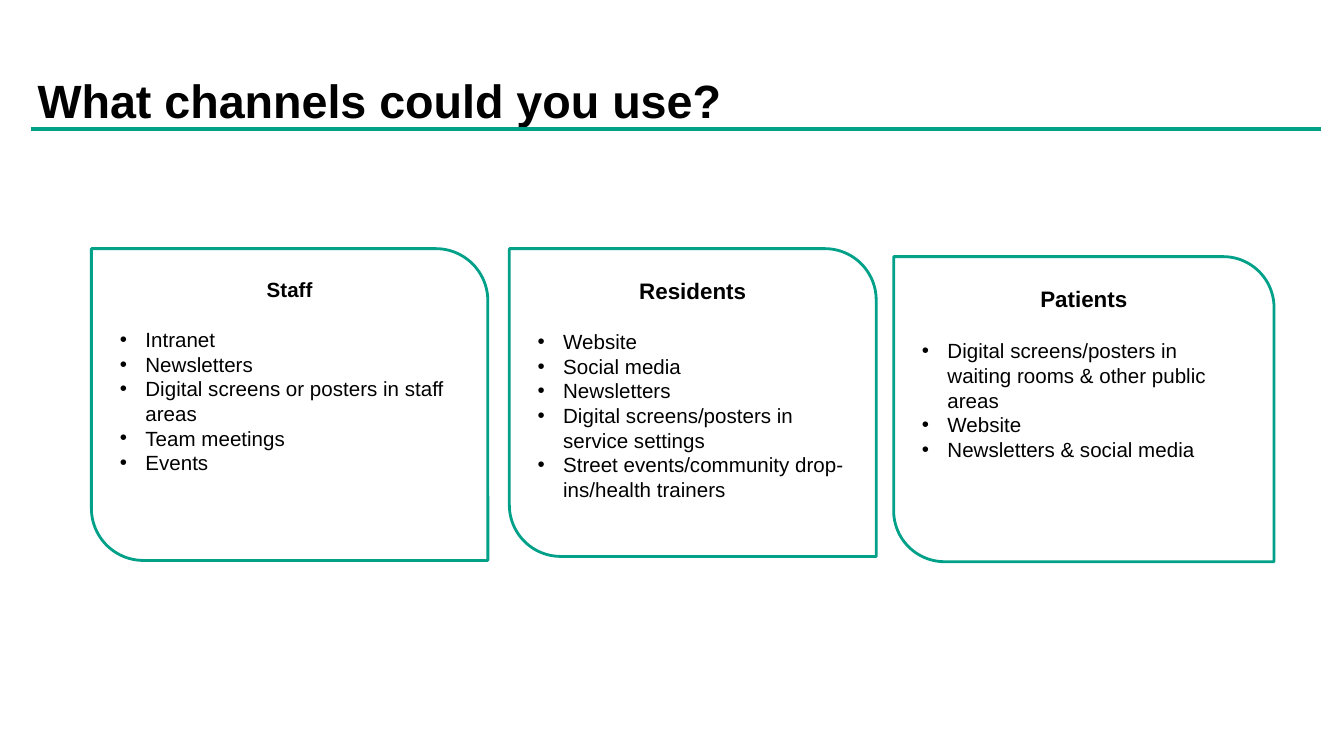
from lxml import etree
from pptx import Presentation
from pptx.dml.color import RGBColor
from pptx.enum import shapes, text
from pptx.oxml import ns
from pptx.util import Inches, Pt

COLORS = {"text": "000000", "accent": "00A188"}
FONT = "Arial"


def style(font, size, bold=False):
    font.name = FONT
    font.size = Pt(size)
    font.bold = bold
    font.color.rgb = RGBColor.from_string(COLORS["text"])


def add_bullet(paragraph):
    props = paragraph._p.get_or_add_pPr()
    props.set("marL", str(Inches(0.19)))
    props.set("indent", str(-Inches(0.19)))
    etree.SubElement(props, ns.qn("a:buFont"), typeface=FONT)
    etree.SubElement(props, ns.qn("a:buChar"), char="•")


# Widescreen 16:9 slide
prs = Presentation()
prs.slide_width = Inches(10)
prs.slide_height = Inches(10 * 9 / 16)
slide = prs.slides.add_slide(prs.slide_layouts[5])
accent = RGBColor.from_string(COLORS["accent"])

# Title
title = slide.shapes.title
title.left, title.top = Inches(0.21), Inches(0.54)
title.width, title.height = Inches(9.39), Inches(0.69)
heading = title.text_frame
heading.text = "What channels could you use?"
heading.word_wrap = True
heading.auto_size = text.MSO_AUTO_SIZE.NONE
heading.vertical_anchor = text.MSO_ANCHOR.TOP
heading.margin_left = heading.margin_right = Inches(0.07)
heading.margin_top = heading.margin_bottom = Inches(0.04)
heading.paragraphs[0].alignment = text.PP_ALIGN.LEFT
heading.paragraphs[0].line_spacing = 0.9
style(heading.paragraphs[0].font, 25, True)

# Rule under the title
rule = slide.shapes.add_connector(
    shapes.MSO_CONNECTOR.STRAIGHT, Inches(0.23), Inches(0.96), Inches(9.83), Inches(0.96))
rule.line.color.rgb = accent
rule.line.width = Pt(2.25)
etree.SubElement(rule._element.spPr, ns.qn("a:effectLst"))

# Audience cards: position, heading size, gap below heading, heading, channels
audiences = [
    ((0.68, 1.85, 2.95, 2.32), 11, 13.4, "Staff",
     ["Intranet", "Newsletters", "Digital screens or posters in staff areas",
      "Team meetings", "Events"]),
    ((3.79, 1.85, 2.73, 2.29), 12, 13.4, "Residents",
     ["Website", "Social media", "Newsletters",
      "Digital screens/posters in  service settings",
      "Street events/community drop-ins/health trainers"]),
    ((6.65, 1.91, 2.83, 2.27), 12, 14.2, "Patients",
     ["Digital screens/posters in  waiting rooms & other public areas",
      "Website", "Newsletters & social media"]),
]
for position, heading_size, gap, audience, channels in audiences:
    card = slide.shapes.add_shape(
        shapes.MSO_SHAPE.ROUND_2_DIAG_RECTANGLE, *[Inches(v) for v in position])
    card.adjustments[0], card.adjustments[1] = 0, 0.167
    card.shadow.inherit = False
    card.fill.background()
    card.line.color.rgb = accent
    card.line.width = Pt(1.5)

    frame = card.text_frame
    frame.word_wrap = True
    frame.vertical_anchor = text.MSO_ANCHOR.TOP
    frame.margin_left = frame.margin_right = Inches(0.1)
    frame.margin_top = frame.margin_bottom = Inches(0.1)
    name = frame.paragraphs[0]
    name.text = audience
    name.alignment = text.PP_ALIGN.CENTER
    name.space_after = Pt(gap)
    style(name.font, heading_size, True)
    for channel in channels:
        item = frame.add_paragraph()
        item.text = channel
        item.alignment = text.PP_ALIGN.LEFT
        add_bullet(item)
        style(item.font, 11)

prs.save("out.pptx")
